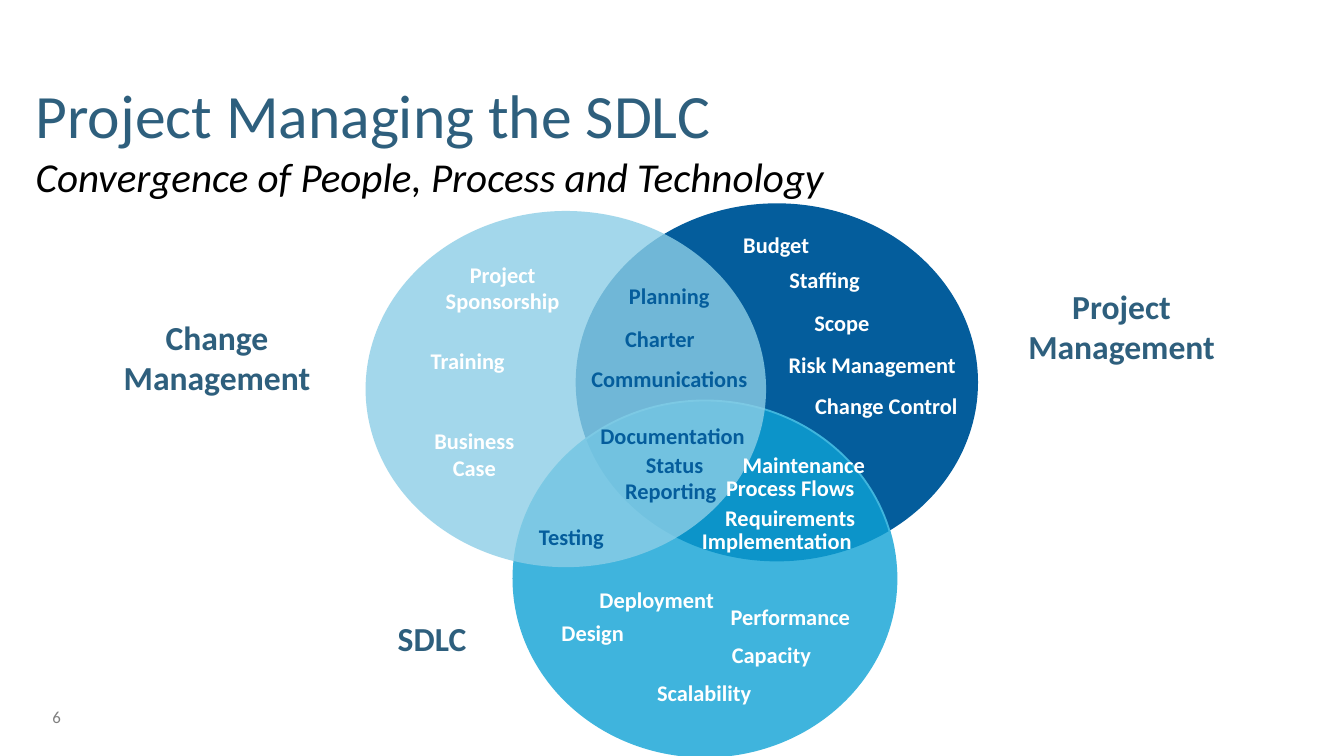
from lxml import etree
from pptx import Presentation
from pptx import util as u
from pptx.dml.color import RGBColor
from pptx.enum import shapes, text
from pptx.oxml import ns

NAVY = RGBColor(0x04, 0x5D, 0x9C)
AZURE = RGBColor(0x0F, 0xA2, 0xD5)
AZURE_EDGE = RGBColor(0x3F, 0xB5, 0xDD)
PALE = RGBColor(0x8C, 0xCE, 0xE6)
SLATE = RGBColor(0x2E, 0x5F, 0x7D)
GREY = RGBColor(0x7F, 0x7F, 0x7F)
BLACK = RGBColor(0, 0, 0)
WHITE = RGBColor(0xFF, 0xFF, 0xFF)

deck = Presentation()
deck.slide_width = u.Inches(10)
deck.slide_height = u.Emu(deck.slide_width * 9 // 16)
slide = deck.slides.add_slide(deck.slide_layouts[6])

# Every place below is counted in cells of a grid 100 columns wide.
CELL = deck.slide_width / 100
LEFT, CENTER = text.PP_ALIGN.LEFT, text.PP_ALIGN.CENTER


def grid(*cells):
    return [u.Emu(round(cell * CELL)) for cell in cells]


def add_label(place, lines, align=CENTER, inset=(0.7, 0.4), bold=True):
    """Add a text box; each line is (wording, size, colour)."""
    box = slide.shapes.add_textbox(*grid(*place))
    frame = box.text_frame
    frame.word_wrap = True
    frame.margin_left, frame.margin_top = grid(*inset)
    frame.margin_right, frame.margin_bottom = grid(*inset)
    frame.text = "\n".join(wording for wording, _, _ in lines)
    for paragraph, (_, size, colour) in zip(frame.paragraphs, lines):
        paragraph.alignment = align
        font = paragraph.runs[0].font
        font.name, font.size, font.bold = "Calibri", u.Pt(size), bold
        font.color.rgb = colour
    return frame


# Slide number and title
number = add_label((3.9, 52.2, 4.4, 2.3), [("6", 9, GREY)], LEFT, (0, 0.4), False)
number.vertical_anchor = text.MSO_ANCHOR.MIDDLE

title = add_label(
    (1.9, 5, 95.9, 15.3),
    [("Project Managing the SDLC", 33, SLATE),
     ("Convergence of People, Process and Technology", 22, BLACK)],
    LEFT, (0.75, 0.75), False)
title.paragraphs[1].runs[0].font.italic = True

# Three overlapping circles: project management, SDLC, change management
for place, fill, edge, opacity in (
    ((42.9, 15.2, 29.8, 26.5), NAVY, NAVY, 100),
    ((38.2, 29.8, 28.5, 26.5), AZURE, AZURE_EDGE, 80),
    ((27.2, 15.7, 29.8, 26.5), PALE, None, 80),
):
    circle = slide.shapes.add_shape(shapes.MSO_SHAPE.OVAL, *grid(*place))
    circle.shadow.inherit = False
    circle.fill.solid()
    circle.fill.fore_color.rgb = fill
    if opacity < 100:
        rgb = circle.element.spPr.find(ns.qn("a:solidFill"))[0]
        etree.SubElement(rgb, ns.qn("a:alpha"), val=str(opacity * 1000))
    if edge is None:
        circle.line.fill.background()
    else:
        circle.line.color.rgb = edge
        circle.line.width = u.Pt(1)

# Names of the circles
for wording, left, top, height in (
    ("Change Management", 5.6, 22.8, 7.6),
    ("SDLC", 21.6, 45.2, 4.5),
    ("Project Management", 72.9, 20.5, 7.6),
):
    add_label((left, top, 21.1, height), [(wording, 18, SLATE)], inset=(0.75, 0.75))

# Topics in each region: wording, left, top, width
topics = {
    WHITE: (
        # change management
        ("Project Sponsorship", 32.2, 19, 10.4),
        ("Training", 29.6, 25.4, 10.4),
        ("Business Case", 30.1, 31.4, 10.4),
        # project management
        ("Budget", 53.4, 16.8, 8.7),
        ("Staffing", 57, 19.4, 8.7),
        ("Scope", 58.3, 22.6, 8.7),
        ("Risk Management", 57.3, 25.7, 15.2),
        ("Change Control", 59.6, 28.8, 12.7),
        # project management and SDLC
        ("Maintenance", 52.9, 33.2, 13.8),
        ("Process Flows", 51.9, 34.9, 13.8),
        ("Requirements", 51.9, 37.1, 13.8),
        ("Implementation", 50.9, 38.8, 13.8),
        # SDLC
        ("Deployment", 43.9, 43.2, 11.9),
        ("Design", 38.2, 45.7, 11.8),
        ("Performance", 52.9, 44.5, 11.8),
        ("Capacity", 51.5, 47.3, 11.8),
        ("Scalability", 46.5, 50.1, 11.8),
    ),
    NAVY: (
        # change and project management
        ("Planning", 44.6, 20.6, 10.4),
        ("Charter", 43.9, 23.8, 10.4),
        ("Communications", 42.9, 26.8, 13.8),
        # all three
        ("Documentation", 43.7, 31, 12.7),
        ("Status", 44.3, 33.2, 11.8),
        ("Reporting", 44, 35.1, 11.8),
        # change management and SDLC
        ("Testing", 39.4, 38.5, 11.9),
    ),
}
two_line = {"Project Sponsorship", "Business Case"}
left_aligned = {"Deployment", "Testing"}
for colour, entries in topics.items():
    for wording, left, top, width in entries:
        height = 4.8 if wording in two_line else 2.8
        align = LEFT if wording in left_aligned else CENTER
        add_label((left, top, width, height), [(wording, 12, colour)], align)

deck.save("out.pptx")
